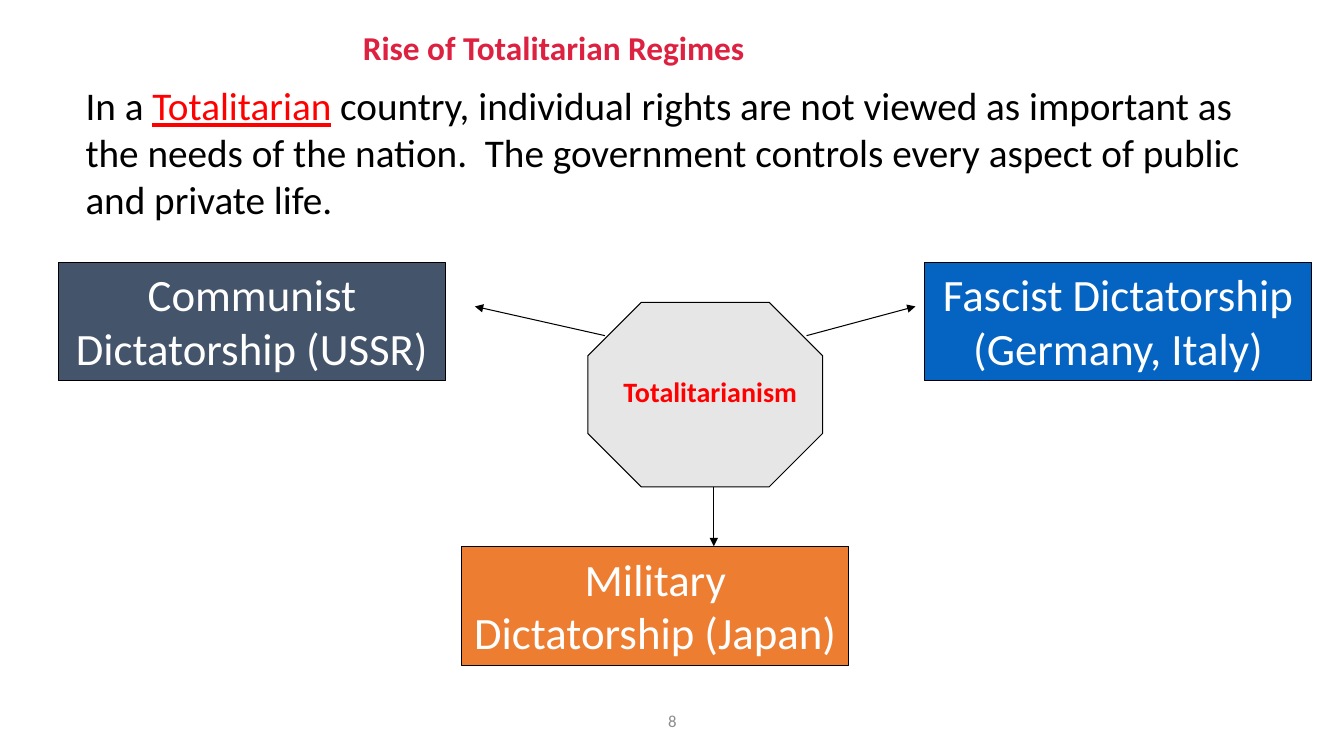
from pptx import Presentation
from pptx.dml.color import RGBColor
from pptx.enum.shapes import MSO_CONNECTOR, MSO_SHAPE
from pptx.enum.text import MSO_ANCHOR, PP_ALIGN
from pptx.oxml.ns import qn
from pptx.util import Inches, Pt
from lxml import etree

BLACK = RGBColor(0x00, 0x00, 0x00)
WHITE = RGBColor(0xFF, 0xFF, 0xFF)
RED = RGBColor(0xFF, 0x00, 0x00)
CRIMSON = RGBColor(0xDD, 0x21, 0x40)
GRAY = RGBColor(0x8C, 0x8C, 0x8C)
SILVER = RGBColor(0xE7, 0xE6, 0xE6)
SLATE = RGBColor(0x44, 0x54, 0x6A)
BLUE = RGBColor(0x05, 0x63, 0xC1)
ORANGE = RGBColor(0xED, 0x7D, 0x31)

RECT = MSO_SHAPE.RECTANGLE
OCTAGON = MSO_SHAPE.OCTAGON
STRAIGHT = MSO_CONNECTOR.STRAIGHT
LEFT, CENTER = PP_ALIGN.LEFT, PP_ALIGN.CENTER
TOP, MIDDLE = MSO_ANCHOR.TOP, MSO_ANCHOR.MIDDLE

FONT = "Calibri"
LINE_WIDTH = Pt(0.75)
BOX_W, BOX_H = 3.84, 1.18

REGIMES = [
    ("Communist Dictatorship (USSR)", 0.58, 2.6, SLATE),
    ("Fascist Dictatorship (Germany, Italy)", 9.17, 2.6, BLUE),
    ("Military Dictatorship (Japan)", 4.58, 5.42, ORANGE),
]
ARROWS = [
    ((7.08, 4.83), (7.08, 5.42)),
    ((6, 3.33), (4.71, 3.04)),
    ((8, 3.33), (9.08, 3.04)),
]


def write(sp, runs, size, align=LEFT, anchor=TOP):
    tf = sp.text_frame
    tf.word_wrap = True
    tf.vertical_anchor = anchor
    p = tf.paragraphs[0]
    p.alignment = align
    for text, color, fmt in runs:
        r = p.add_run()
        r.text = text
        r.font.color.rgb = color
        for name, value in {"name": FONT, "size": Pt(size), **fmt}.items():
            setattr(r.font, name, value)
    return p


def add_text(s, box, runs, size, **layout):
    sp = s.shapes.add_textbox(*map(Inches, box))
    return write(sp, runs, size, **layout)


def add_block(s, kind, box, fill):
    sp = s.shapes.add_shape(kind, *map(Inches, box))
    sp.shadow.inherit = False
    sp.fill.solid()
    sp.fill.fore_color.rgb = fill
    sp.line.color.rgb = BLACK
    sp.line.width = LINE_WIDTH
    return sp


def add_arrow(s, start, end):
    line = s.shapes.add_connector(STRAIGHT, *map(Inches, start + end))
    line.line.color.rgb = BLACK
    line.line.width = LINE_WIDTH
    ln = line.line._get_or_add_ln()
    etree.SubElement(ln, qn("a:tailEnd"), type="triangle")
    etree.SubElement(line._element.spPr, qn("a:effectLst"))


def main():
    prs = Presentation()
    prs.slide_width, prs.slide_height = Inches(13.33), Inches(7.5)
    s = prs.slides.add_slide(prs.slide_layouts[6])

    add_text(s, (4.42, 6.95, 4.5, 0.4), [("8", GRAY, {})], 12,
             align=CENTER, anchor=MIDDLE)
    title = add_text(s, (3.5, 0.33, 7.42, 0.42),
                     [("Rise of Totalitarian Regimes", CRIMSON, {"bold": True})], 23.8)
    title.line_spacing = 0.7
    title.space_before = Pt(10)
    add_text(s, (0.75, 0.76, 12.04, 1.51), [
        ("In a ", BLACK, {}),
        ("Totalitarian", RED, {"underline": True}),
        (" country, individual rights are not viewed as important as the needs "
         "of the nation.  The government controls every aspect of public and "
         "private life.", BLACK, {}),
    ], 28)

    octagon = add_block(s, OCTAGON, (5.83, 3, 2.33, 1.83), SILVER)
    octagon.adjustments[0] = 0.29
    add_text(s, (5.92, 3.67, 2.25, 0.43),
             [("Totalitarianism", RED, {"bold": True})], 20, align=CENTER)

    for text, left, top, fill in REGIMES:
        sp = add_block(s, RECT, (left, top, BOX_W, BOX_H), fill)
        write(sp, [(text, WHITE, {})], 32, align=CENTER)
    for start, end in ARROWS:
        add_arrow(s, start, end)

    prs.save("out.pptx")


if __name__ == "__main__":
    main()
